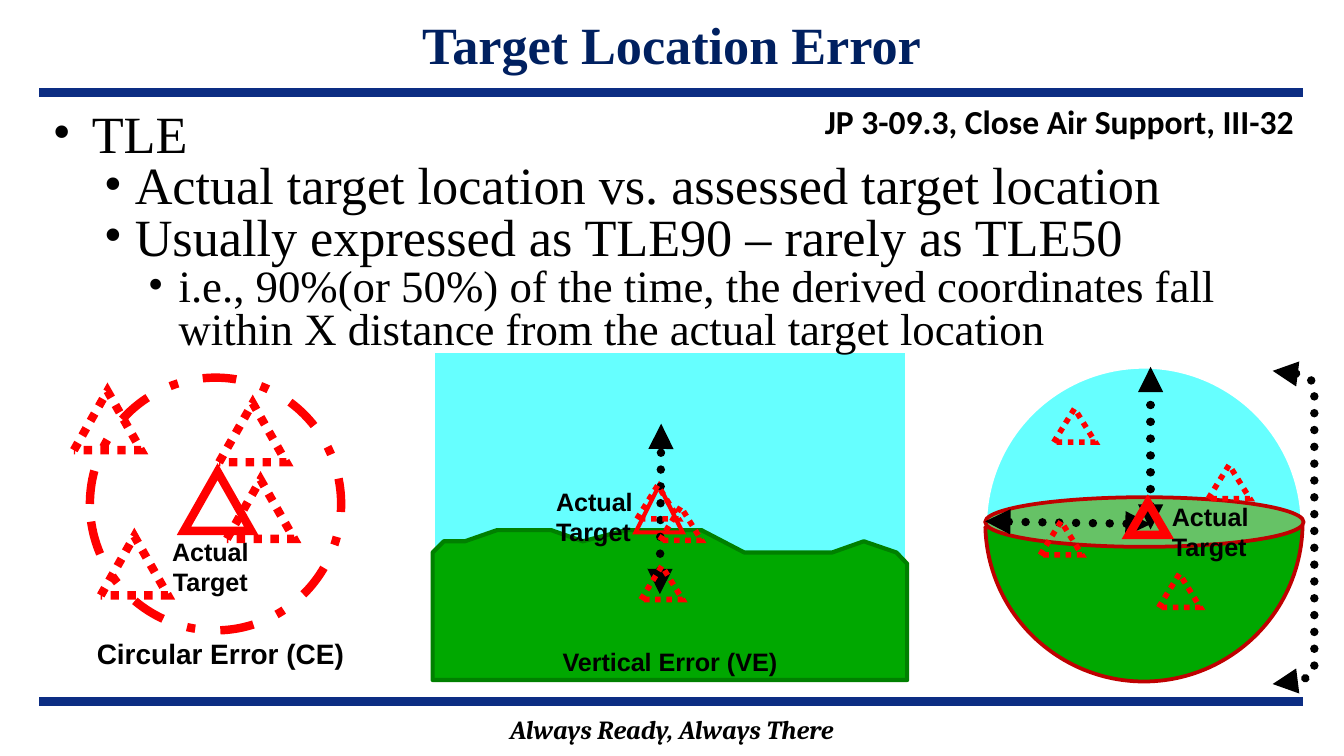
from lxml.etree import SubElement
from pptx import Presentation
from pptx.dml.color import RGBColor
from pptx.enum.dml import MSO_LINE
from pptx.enum.shapes import MSO_CONNECTOR, MSO_SHAPE
from pptx.enum.text import MSO_ANCHOR, MSO_AUTO_SIZE, PP_ALIGN
from pptx.oxml.ns import qn
from pptx.util import Pt

RED, BLACK, WHITE = "FF0000", "000000", "FFFFFF"
SKY, GROUND, RIM = "66FFFF", "00A800", "C00000"
DOTS = MSO_LINE.ROUND_DOT


def color(value):
    return RGBColor.from_string(value)


def style_line(line, value, width, dash=None, arrows=False):
    line.fill.solid()
    line.fill.fore_color.rgb = color(value)
    line.width = Pt(width)
    if dash:
        line.dash_style = dash
    if arrows:
        ln = line._ln
        ln.set("cap", "rnd")
        for end in ("a:headEnd", "a:tailEnd"):
            SubElement(ln, qn(end), type="triangle")


def paint(shape, fill, line, width, dash=None, arrows=False):
    shape.shadow.inherit = False
    if fill:
        shape.fill.solid()
        shape.fill.fore_color.rgb = color(fill)
    else:
        shape.fill.background()
    style_line(shape.line, line, width, dash, arrows)


def add_shape(slide, kind, origin, box, fill, line, width, dash=None, arrows=False):
    x, y, w, h = box
    shape = slide.shapes.add_shape(
        kind, Pt(origin[0] + x), Pt(origin[1] + y), Pt(w), Pt(h))
    paint(shape, fill, line, width, dash, arrows)
    return shape


def add_targets(slide, origin, spots, size, width, dash=None):
    for spot in spots:
        target = add_shape(slide, MSO_SHAPE.ISOSCELES_TRIANGLE, origin,
                           (*spot, *size), None, RED, width, dash)
        SubElement(target.line._ln, qn("a:miter"), lim="800000")


def add_line(slide, origin, start, end, value, width, dash=None, arrows=False):
    x, y = origin
    line = slide.shapes.add_connector(
        MSO_CONNECTOR.STRAIGHT, Pt(x + start[0]), Pt(y + start[1]),
        Pt(x + end[0]), Pt(y + end[1]))
    style_line(line.line, value, width, dash, arrows)
    SubElement(line._element.spPr, qn("a:effectLst"))


def add_run(paragraph, text, size, font, value, bold=False, italic=False):
    run = paragraph.add_run()
    run.text = text
    run.font.name = font
    run.font.size = Pt(size)
    run.font.bold = bold
    run.font.italic = italic
    run.font.color.rgb = color(value)


def add_label(slide, origin, box, text, size=13.5, font="Arial",
              align=PP_ALIGN.CENTER, italic=False):
    x, y, w, h = box
    label = slide.shapes.add_textbox(
        Pt(origin[0] + x), Pt(origin[1] + y), Pt(w), Pt(h))
    label.text_frame.word_wrap = True
    paragraph = label.text_frame.paragraphs[0]
    paragraph.alignment = align
    add_run(paragraph, text, size, font, BLACK, True, italic)
    return label


def fit_placeholder(slide, holder, box, anchor):
    slide.shapes._spTree.append(holder._element)
    holder.left, holder.top, holder.width, holder.height = map(Pt, box)
    frame = holder.text_frame
    frame.word_wrap = True
    frame.auto_size = MSO_AUTO_SIZE.NONE
    frame.vertical_anchor = anchor
    frame.margin_left = frame.margin_right = Pt(3)
    frame.margin_top = frame.margin_bottom = Pt(3)
    return frame


def add_heading(slide, box):
    frame = fit_placeholder(slide, slide.shapes.title, box, MSO_ANCHOR.MIDDLE)
    heading = frame.paragraphs[0]
    heading.alignment = PP_ALIGN.CENTER
    add_run(heading, "Target Location Error", 28, "Times New Roman", "002060", True)


def add_points(slide, box):
    points = [
        (0, "TLE"),
        (1, "Actual target location vs. assessed target location"),
        (1, "Usually expressed as TLE90 – rarely as TLE50"),
        (2, "i.e., 90%(or 50%) of the time, the derived coordinates fall "
            "within X distance from the actual target location"),
    ]
    levels = [(21, 21, 28), (44, 16.5, 28), (67.5, 16.5, 24)]
    frame = fit_placeholder(slide, slide.placeholders[1], box, MSO_ANCHOR.TOP)
    for index, (level, text) in enumerate(points):
        point = frame.add_paragraph() if index else frame.paragraphs[0]
        left, hanging, size = levels[level]
        point.level = level
        properties = point._p.get_or_add_pPr()
        properties.set("marL", str(Pt(left)))
        properties.set("indent", str(-Pt(hanging)))
        SubElement(properties, qn("a:buFont"), typeface="Times New Roman")
        SubElement(properties, qn("a:buChar"), char="•")
        point.alignment = PP_ALIGN.LEFT
        point.line_spacing = 0.8
        point.space_before = Pt(0.8 if index else 0)
        add_run(point, text, size, "Times New Roman", BLACK)


def add_frame(slide, box):
    x, y, w, h = box
    for level in (0, h):
        add_line(slide, (x, y), (0, level), (w, level), "0C2D83", 5)
    motto = add_label(slide, (x, y), (157.5, h + 6.5, 363, 17),
                      "Always Ready, Always There", 14, "Cambria", italic=True)
    motto.text_frame.margin_top = motto.text_frame.margin_bottom = 0


def add_citation(slide, box):
    citation = add_label(slide, box[:2], (0, 0, *box[2:]),
                         "JP 3-09.3, Close Air Support, III-32", 18, "Calibri",
                         PP_ALIGN.LEFT)
    properties = citation.text_frame.paragraphs[0]._p.get_or_add_pPr()
    properties.set("marL", str(Pt(46)))


def add_circular_error(slide, box):
    origin, size = box[:2], (36, 31.7)
    add_targets(slide, origin, [(59, 50.4)], size, 4.5)
    add_label(slide, origin, (28.8, 81.4, 88.6, 40), "Actual Target")
    add_shape(slide, MSO_SHAPE.OVAL, origin, (8.6, 0, box[2] - 8.6, box[3]),
              None, RED, 4.5, MSO_LINE.DASH_DOT)
    assessed = [(77.8, 13.7), (82, 54.7), (14.4, 85), (0, 7.2)]
    add_targets(slide, origin, assessed, size, 4.5, DOTS)
    add_label(slide, origin, (-36, box[3], 229, 24), "Circular Error (CE)", 15)


def add_vertical_error(slide, box):
    x, y, w, h = box
    origin = (x, y)
    add_shape(slide, MSO_SHAPE.RECTANGLE, origin, (0, 0, w, 172), SKY, WHITE, 2.25)
    ridge = [(6, 102), (17.3, 102), (34.5, 96), (63.5, 96), (80.5, 102),
             (103.5, 96), (144, 96), (167, 108), (214, 108), (231, 102),
             (248.5, 108), (w, 114), (w, h), (0, h), (0, 108)]
    outline = [(Pt(x + across), Pt(y + down)) for across, down in ridge]
    terrain = slide.shapes.build_freeform(*outline[0])
    terrain.add_line_segments(outline[1:], close=True)
    paint(terrain.convert_to_shape(), GROUND, "008000", 2.25)
    add_targets(slide, origin, [(108.7, 72)], (25.2, 25.2), 2.25)
    add_label(slide, origin, (59, 69, 71.3, 40), "Actual Target", align=PP_ALIGN.LEFT)
    add_label(slide, origin, (0, h - 21.5, w, 24), "Vertical Error (VE)")
    add_line(slide, origin, (121.7, 130.3), (122.4, 39), BLACK, 4.5, DOTS, True)
    assessed = [(111.6, 115.2), (109.4, 72), (121.7, 83.5)]
    add_targets(slide, origin, assessed, (22.3, 18), 3, DOTS)


def add_spherical_error(slide, box):
    origin, size = box[:2], box[2]
    for top, turn, fill, rim in ((0, 180, GROUND, RIM), (1.4, 0, SKY, WHITE)):
        half = add_shape(slide, MSO_SHAPE.CHORD, origin, (0, top, size, size),
                         fill, rim, 2)
        half.rotation = turn
        half.adjustments[0] = 108.6
        half.adjustments[1] = 215.03
    add_shape(slide, MSO_SHAPE.OVAL, origin, (0, 71.3, 170.6, 26.6),
              "66C266", RIM, 2)
    bracket = add_shape(slide, MSO_SHAPE.RIGHT_BRACKET, origin,
                        (154, 3.6, 22.3, 167.8), None, BLACK, 4.5, DOTS, True)
    bracket.adjustments[0] = 0.37
    add_line(slide, origin, (0, 84.2), (88.6, 85.7), BLACK, 4.5, DOTS, True)
    add_line(slide, origin, (88.6, 88.6), (88.6, 1.4), BLACK, 4.5, DOTS, True)
    add_label(slide, origin, (92.9, 69.8, 71.3, 40), "Actual Target", align=PP_ALIGN.LEFT)
    assessed = [(92.9, 112.3), (29.5, 84.2), (119.5, 54), (36.7, 23.8)]
    add_targets(slide, origin, assessed, (22.3, 18), 3, DOTS)
    add_targets(slide, origin, [(77, 74.2)], (20.2, 17.3), 4.5)


def main():
    deck = Presentation()
    deck.slide_width, deck.slide_height = Pt(720), Pt(405)
    slide = deck.slides.add_slide(deck.slide_layouts[1])
    add_frame(slide, (21, 49.7, 677, 326.1))
    add_vertical_error(slide, (231.8, 188, 254.2, 176.3))
    add_heading(slide, (124, 3.6, 471.6, 39))
    add_points(slide, (25.2, 57.6, 682.6, 141.8))
    add_circular_error(slide, (39.6, 202.3, 143.2, 135.4))
    add_spherical_error(slide, (527.8, 195.1, 170, 170))
    add_citation(slide, (388.8, 50.4, 331.2, 29))
    deck.save("out.pptx")


if __name__ == "__main__":
    main()
